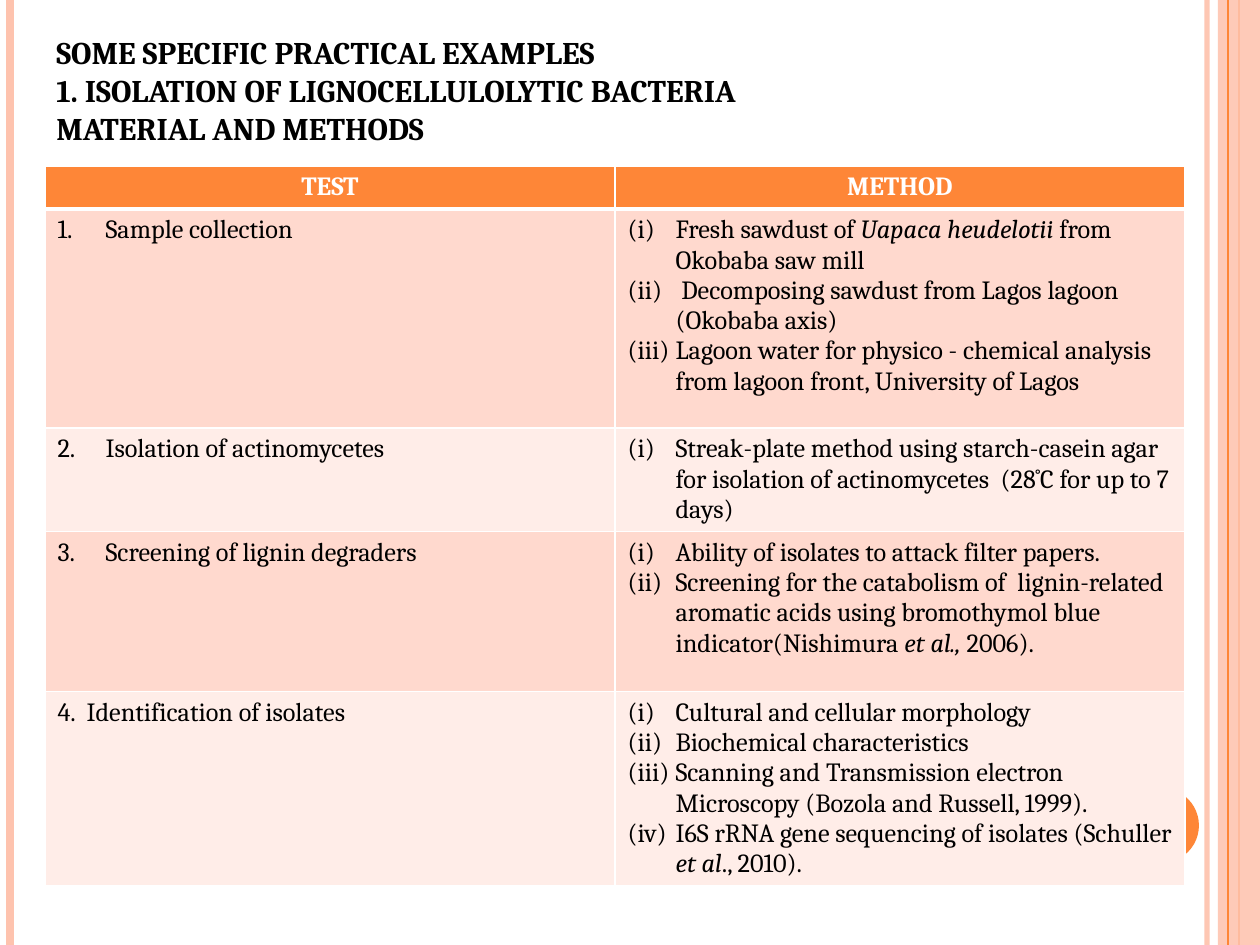
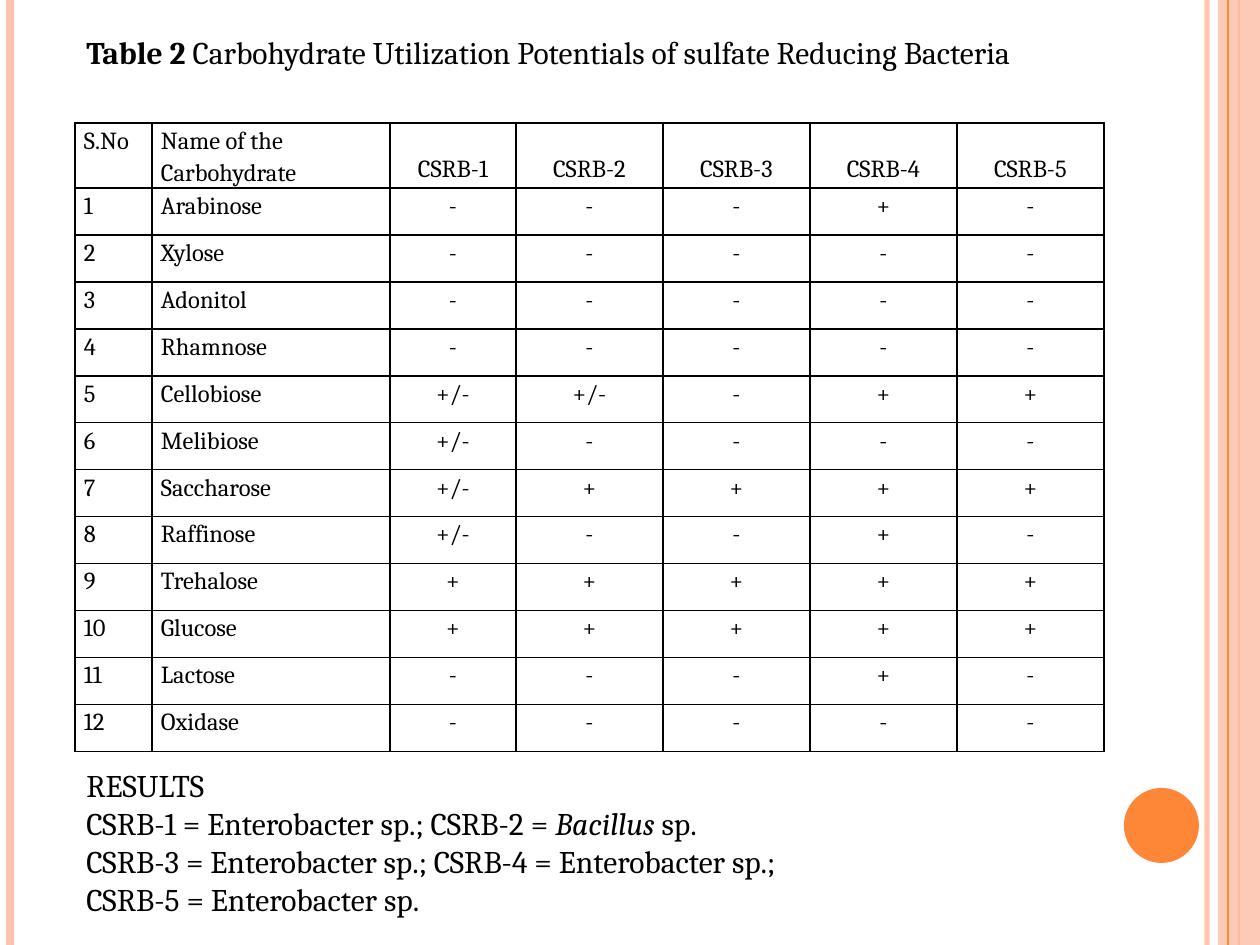
from lxml import etree
from pptx import Presentation
from pptx import util as u
from pptx.dml import color
from pptx.enum import shapes, text
from pptx.oxml import ns

HUES = {"orange": "FE8637", "peach": "FEC3AE", "rose": "FFD9CE",
        "blush": "FFEDE8", "white": "FFFFFF", "black": "000000"}
WIDE, HIGH = 1260, 945
INDENT = 48

STEPS = [
    (219, "Sample collection", 1,
     ["Fresh sawdust of *Uapaca heudelotii *from Okobaba saw mill",
      " Decomposing sawdust from Lagos lagoon (Okobaba axis)",
      "Lagoon water for physico - chemical analysis from lagoon front, University of Lagos"]),
    (101, "Isolation of actinomycetes", 2,
     ["Streak-plate method using starch-casein agar for isolation of actinomycetes  (28˚C for up to 7 days)"]),
    (160, "Screening of lignin degraders", 3,
     ["Ability of isolates to attack filter papers.",
      "Screening for the catabolism of  lignin-related aromatic acids using bromothymol blue "
      "indicator(Nishimura *et al., *2006)."]),
    (190, "4.  Identification of isolates", None,
     ["Cultural and cellular morphology",
      "Biochemical characteristics",
      "Scanning and Transmission electron Microscopy (Bozola and Russell, 1999).",
      "I6S rRNA gene sequencing of isolates (Schuller *et al*., 2010)."]),
]

SUGARS = [
    ("Arabinose", "- - - + -"),
    ("Xylose", "- - - - -"),
    ("Adonitol", "- - - - -"),
    ("Rhamnose", "- - - - -"),
    ("Cellobiose", "+/- +/- - + +"),
    ("Melibiose", "+/- - - - -"),
    ("Saccharose", "+/- + + + +"),
    ("Raffinose", "+/- - - + -"),
    ("Trehalose", "+ + + + +"),
    ("Glucose", "+ + + + +"),
    ("Lactose", "- - - + -"),
    ("Oxidase", "- - - - -"),
]


def px(count):
    """Turn px into EMU."""
    return u.Emu(round(count * 914400 / 126))


def rgb(hue):
    """Look up a colour by name."""
    return color.RGBColor.from_string(HUES[hue])


def node(parent, tag, **attrs):
    """Append a drawing element with attributes."""
    child = etree.SubElement(parent, ns.qn("a:" + tag))
    for key, value in attrs.items():
        child.set(key, str(value))
    return child


def fade(part, share):
    """Set the opacity of the first colour found, in percent."""
    node(next(part.iter(ns.qn("a:srgbClr"))), "alpha", val=share * 1000)


def write(frame, lines, size=18, hue="black", bold=False, mark="italic",
          align=None, gap=None, scheme=None, start=1):
    """Write paragraphs, giving the mark format to parts between asterisks."""
    frame.word_wrap = True
    for num, line in enumerate(lines):
        para = frame.add_paragraph() if num else frame.paragraphs[0]
        para.alignment = align
        para.line_spacing = gap
        if scheme:
            props = para._p.get_or_add_pPr()
            props.set("marL", str(px(INDENT)))
            props.set("indent", str(-px(INDENT)))
            extra = {"startAt": start} if start > 1 else {}
            node(props, "buAutoNum", type=scheme, **extra)
        for turn, piece in enumerate(line.split("*")):
            if piece:
                run = para.add_run()
                run.text = piece
                run.font.name = "Cambria"
                run.font.size = u.Pt(size)
                run.font.bold = bold
                run.font.color.rgb = rgb(hue)
                if turn % 2:
                    setattr(run.font, mark, True)


def label(slide, box, lines, **form):
    """Add a text box."""
    write(slide.shapes.add_textbox(*map(px, box)).text_frame, lines, **form)


def rule(slide, left, hue, width):
    """Draw a full-height vertical line."""
    line = slide.shapes.add_connector(
        shapes.MSO_CONNECTOR.STRAIGHT, px(left), 0, px(left), px(HIGH))
    line.line.color.rgb = rgb(hue)
    line.line.width = u.Pt(width)
    node(line._element.spPr, "effectLst")
    return line


def solid(slide, kind, box, hue):
    """Add a plain filled shape."""
    shape = slide.shapes.add_shape(kind, *map(px, box))
    shape.shadow.inherit = False
    shape.fill.solid()
    shape.fill.fore_color.rgb = rgb(hue)
    shape.line.fill.background()
    return shape


def base(deck):
    """Add a blank slide with the side bands and the dot."""
    slide = deck.slides.add_slide(deck.slide_layouts[6])
    fade(rule(slide, 1207, "peach", 3)._element, 93)
    rule(slide, 10, "peach", 4.5)
    rule(slide, 1239, "orange", 1.5)
    band = solid(slide, shapes.MSO_SHAPE.RECTANGLE, (1218, 0, WIDE - 1218, HIGH), "peach")
    fade(band._element, 87)
    rule(slide, 1228, "orange", 0.75)
    solid(slide, shapes.MSO_SHAPE.OVAL, (1124, 788, 75, 75), "orange")
    return slide


def grid(slide, left, top, cols, rows):
    """Add an unstyled table with the given column and row sizes."""
    table = slide.shapes.add_table(
        len(rows), len(cols), px(left), px(top), px(sum(cols)), px(sum(rows))).table
    table.first_row = table.horz_banding = False
    for col, size in zip(table.columns, cols):
        col.width = px(size)
    for row, size in zip(table.rows, rows):
        row.height = px(size)
    return table


def dress(cell, edge, fill=None, base=1):
    """Set the borders and the fill of a cell."""
    props = cell._tc.get_or_add_tcPr()
    for side in "LRTB":
        width = u.Pt(base if side == "B" else 1)
        line = node(props, "ln" + side, w=width)
        node(node(line, "solidFill"), "srgbClr", val=HUES[edge])
    if fill:
        cell.fill.solid()
        cell.fill.fore_color.rgb = rgb(fill)
    else:
        cell.fill.background()


def methods(slide, left, top, width):
    """Place the table of tests and methods."""
    table = grid(slide, left, top, [width // 2] * 2, [39] + [step[0] for step in STEPS])
    for col, head in enumerate(("TEST", "METHOD")):
        cell = table.cell(0, col)
        write(cell.text_frame, [head], size=15, hue="white", bold=True,
              align=text.PP_ALIGN.CENTER)
        dress(cell, "white", "orange", base=3)
    for row, (_, test, start, items) in enumerate(STEPS, 1):
        name, method = table.cell(row, 0), table.cell(row, 1)
        write(name.text_frame, [test], size=15,
              scheme="arabicPeriod" if start else None, start=start or 1)
        write(method.text_frame, items, size=15, scheme="romanLcParenBoth")
        for cell in (name, method):
            dress(cell, "white", "rose" if row % 2 else "blush",
                  base=1)


def sugars(slide, left, top):
    """Place the table of carbohydrate use."""
    cols = [77, 238, 126] + [147] * 4
    table = grid(slide, left, top, cols, [64] + [47] * len(SUGARS))
    lines = [["S.No", "Name of the Carbohydrate"] + [f"CSRB-{num}" for num in range(1, 6)]]
    lines += [[str(num), name] + signs.split() for num, (name, signs) in enumerate(SUGARS, 1)]
    for row, line in enumerate(lines):
        for col, word in enumerate(line):
            cell = table.cell(row, col)
            cell.margin_left = cell.margin_right = px(9)
            cell.margin_top = cell.margin_bottom = 0
            if row == 0 and col > 1:
                cell.vertical_anchor = text.MSO_ANCHOR.BOTTOM
                cell.margin_bottom = px(4)
            write(cell.text_frame, [word], size=14, gap=1.15,
                  align=text.PP_ALIGN.CENTER if col > 1 else None)
            dress(cell, "black")


def main():
    """Build and save both slides."""
    deck = Presentation()
    deck.slide_width, deck.slide_height = px(WIDE), px(HIGH)

    slide = base(deck)
    methods(slide, 45, 166, 1140)
    label(slide, (44, 27, 1111, 204),
          ["SOME SPECIFIC PRACTICAL EXAMPLES",
           "1. ISOLATION OF LIGNOCELLULOLYTIC BACTERIA",
           "MATERIAL AND METHODS"], bold=True)

    slide = base(deck)
    sugars(slide, 75, 123)
    label(slide, (74, 27, 1032, 127),
          ["*Table 2 *Carbohydrate Utilization Potentials of sulfate Reducing Bacteria"],
          mark="bold")
    label(slide, (74, 760, 1032, 185),
          ["RESULTS",
           "CSRB-1 = Enterobacter sp.; CSRB-2 = *Bacillus *sp.",
           "CSRB-3 = Enterobacter sp.; CSRB-4 = Enterobacter sp.;",
           "CSRB-5 = Enterobacter sp."])
    deck.save("out.pptx")


if __name__ == "__main__":
    main()
